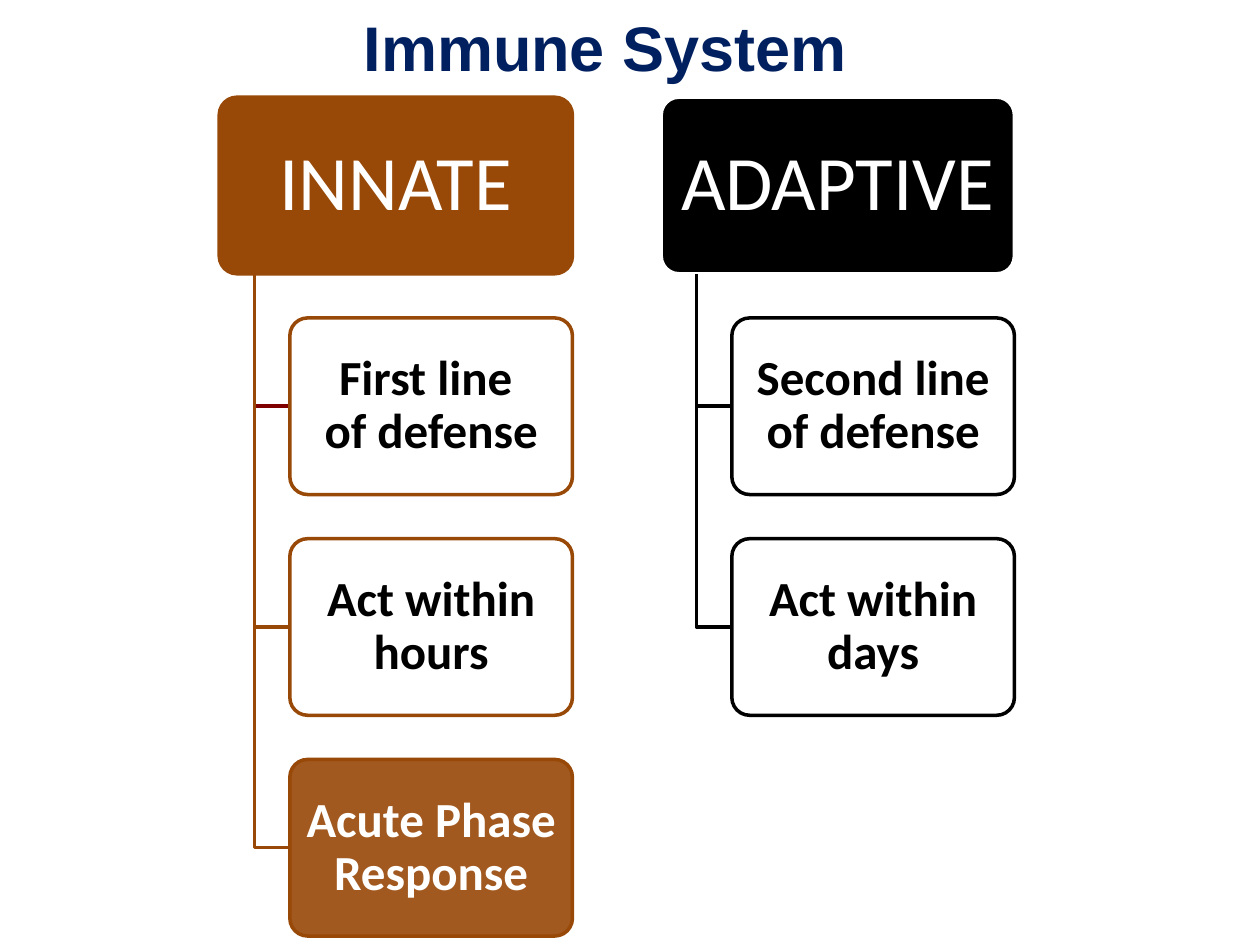
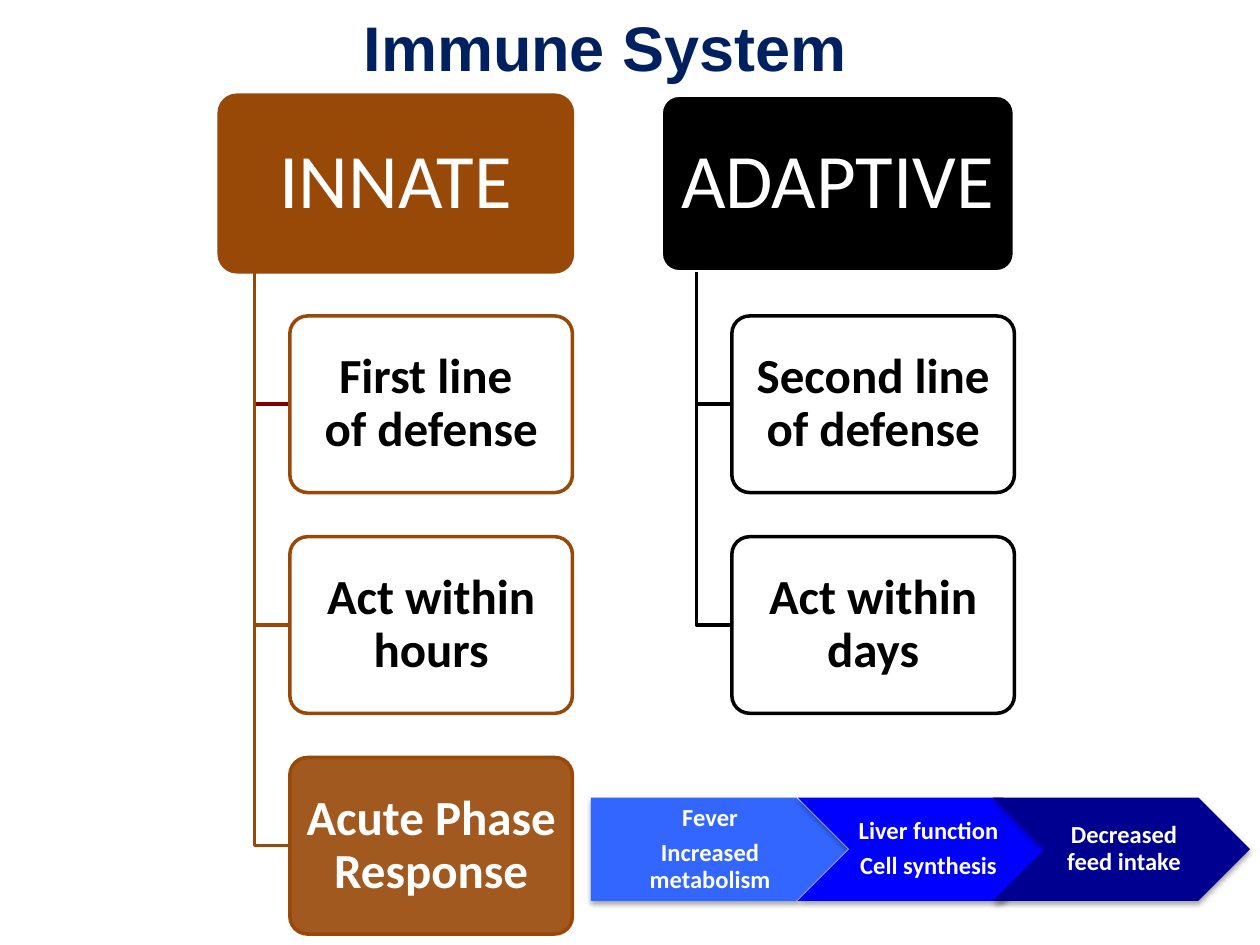
from lxml import etree
from pptx import Presentation
from pptx.dml.color import RGBColor
from pptx.enum.shapes import MSO_SHAPE as Shape
from pptx.enum.text import MSO_ANCHOR as Anchor, MSO_AUTO_SIZE as AutoSize, PP_ALIGN as Align
from pptx.oxml import parse_xml
from pptx.oxml.ns import nsdecls, qn
from pptx.util import Cm, Pt

COLORS = {
    "title": "002060",
    "innate": "984807",
    "first_branch": "800000",
    "adaptive": "000000",
    "white": "FFFFFF",
    "black": "000000",
    "fever": "3366FF",
    "liver": "0000FF",
    "intake": "000090",
}
TITLE_LAYOUT = 5
BODY_FONT = "Calibri"
BOX_HEIGHT = 3.56
INNATE_LEFT, ADAPTIVE_LEFT = 4.42, 13.33

# Each branch: text, fill, text colour, colour of its elbow
INNATE_BRANCHES = [
    ("First line \vof defense", "white", "black", "first_branch"),
    ("Act within hours", "white", "black", "innate"),
    ("Acute Phase Response", "innate", "white", "innate"),
]
ADAPTIVE_BRANCHES = [
    ("Second line of defense", "white", "black", "adaptive"),
    ("Act within days", "white", "black", "adaptive"),
]
# Each effect: left offset, outline, left inset, fill, paragraphs
ACUTE_PHASE_EFFECTS = [
    (0, Shape.PENTAGON, 0.2, "fever", ["Fever", "Increased metabolism"]),
    (4.17, Shape.CHEVRON, 0.15, "liver", ["Liver function", "Cell synthesis"]),
    (8.11, Shape.CHEVRON, 0.15, "intake", ["Decreased feed intake"]),
]


def rgb(name):
    return RGBColor.from_string(COLORS[name])


def set_fill(shape, color, opacity=100):
    shape.fill.solid()
    shape.fill.fore_color.rgb = rgb(color)
    if opacity < 100:
        color_node = shape.fill._xPr.find(qn("a:solidFill"))[0]
        etree.SubElement(color_node, qn("a:alpha")).set("val", str(opacity * 1000))


def set_line(shape, color):
    shape.line.color.rgb = rgb(color)
    shape.line.width = Pt(2)


def write(shape, paragraphs, size, color, bold, insets):
    """Fill a shape with centred text; insets are left, top, right, bottom in cm."""
    frame = shape.text_frame
    frame.word_wrap = True
    frame.vertical_anchor = Anchor.MIDDLE
    (frame.margin_left, frame.margin_top,
     frame.margin_right, frame.margin_bottom) = map(Cm, insets)
    frame.text = "\n".join(paragraphs)
    for paragraph in frame.paragraphs:
        paragraph.alignment = Align.CENTER
        paragraph.line_spacing = 0.9
        paragraph.space_after = Pt(round(size * 0.35))
        font = paragraph.font
        font.name, font.size, font.bold = BODY_FONT, Pt(size), bold
        font.color.rgb = rgb(color)


def add_box(slide, left, top, width, fill, line, opacity=100):
    box = slide.shapes.add_shape(
        Shape.ROUNDED_RECTANGLE, Cm(left), Cm(top), Cm(width), Cm(BOX_HEIGHT))
    box.adjustments[0] = 0.1
    box.shadow.inherit = False
    set_fill(box, fill, opacity)
    set_line(box, line)
    return box


def add_elbow(slide, left, top, right, bottom, color):
    """Draw a line that runs down from the header and turns right to a branch."""
    builder = slide.shapes.build_freeform(Cm(left), Cm(top))
    builder.add_line_segments(
        [(Cm(left), Cm(bottom)), (Cm(right), Cm(bottom))], close=False)
    elbow = builder.convert_to_shape()
    elbow.fill.background()
    elbow.shadow.inherit = False
    set_line(elbow, color)


def add_column(slide, left, top, heading, color, heading_line, branches):
    width = 2 * BOX_HEIGHT
    trunk_left, branch_left = left + width / 10, left + width / 5
    header = add_box(slide, left, top, width, color, heading_line)
    write(header, [heading], 44, "white", False, (0.23, 0.15, 0.23, 0.15))
    for row, (text, fill, text_color, elbow_color) in enumerate(branches, start=1):
        branch_top = top + row * 1.25 * BOX_HEIGHT
        add_elbow(slide, trunk_left, top + BOX_HEIGHT,
                  branch_left, branch_top + BOX_HEIGHT / 2, elbow_color)
        branch = add_box(slide, branch_left, branch_top, width * 0.8, fill, color, 90)
        write(branch, [text], 28, text_color, True, (0.15, 0.1, 0.15, 0.1))


def add_soft_shadow(shape):
    shape.shadow.inherit = False
    effects = shape._element.spPr.find(qn("a:effectLst"))
    effects.append(parse_xml(
        f'<a:outerShdw {nsdecls("a")} blurRad="{Pt(3.1)}" dist="{Pt(1.8)}" '
        'dir="5400000" rotWithShape="0"><a:srgbClr val="000000">'
        '<a:alpha val="35000"/></a:srgbClr></a:outerShdw>'))


def add_effect_arrows(slide, left, top, width, height):
    for offset, outline, left_inset, fill, paragraphs in ACUTE_PHASE_EFFECTS:
        arrow = slide.shapes.add_shape(
            outline, Cm(left + offset), Cm(top), Cm(width), Cm(height))
        set_fill(arrow, fill)
        arrow.line.fill.background()
        add_soft_shadow(arrow)
        write(arrow, paragraphs, 14, "white", True, (left_inset, 0.1, 0.05, 0.1))


def set_title(slide, text):
    title = slide.shapes.title
    title.left, title.top, title.width, title.height = map(Cm, (0.91, 0.03, 22.58, 1.8))
    frame = title.text_frame
    frame.text = text
    frame.auto_size = AutoSize.NONE
    frame.vertical_anchor = Anchor.MIDDLE
    paragraph = frame.paragraphs[0]
    paragraph.alignment = Align.CENTER
    font = paragraph.font
    font.name, font.size, font.bold = "Arial", Pt(36), True
    font.color.rgb = rgb("title")


def add_immune_slide(deck, columns_top):
    slide = deck.slides.add_slide(deck.slide_layouts[TITLE_LAYOUT])
    set_title(slide, "Immune System")
    add_column(slide, INNATE_LEFT, columns_top, "INNATE", "innate", "innate",
               INNATE_BRANCHES)
    add_column(slide, ADAPTIVE_LEFT, columns_top, "ADAPTIVE", "adaptive", "white",
               ADAPTIVE_BRANCHES)
    return slide


def main():
    deck = Presentation()
    deck.slide_width, deck.slide_height = Cm(25.4), Cm(19.05)
    add_immune_slide(deck, columns_top=1.96)
    acute_phase = add_immune_slide(deck, columns_top=1.92)
    add_effect_arrows(acute_phase, left=11.91, top=16.08, width=5.18, height=2.08)
    deck.save("out.pptx")


if __name__ == "__main__":
    main()
